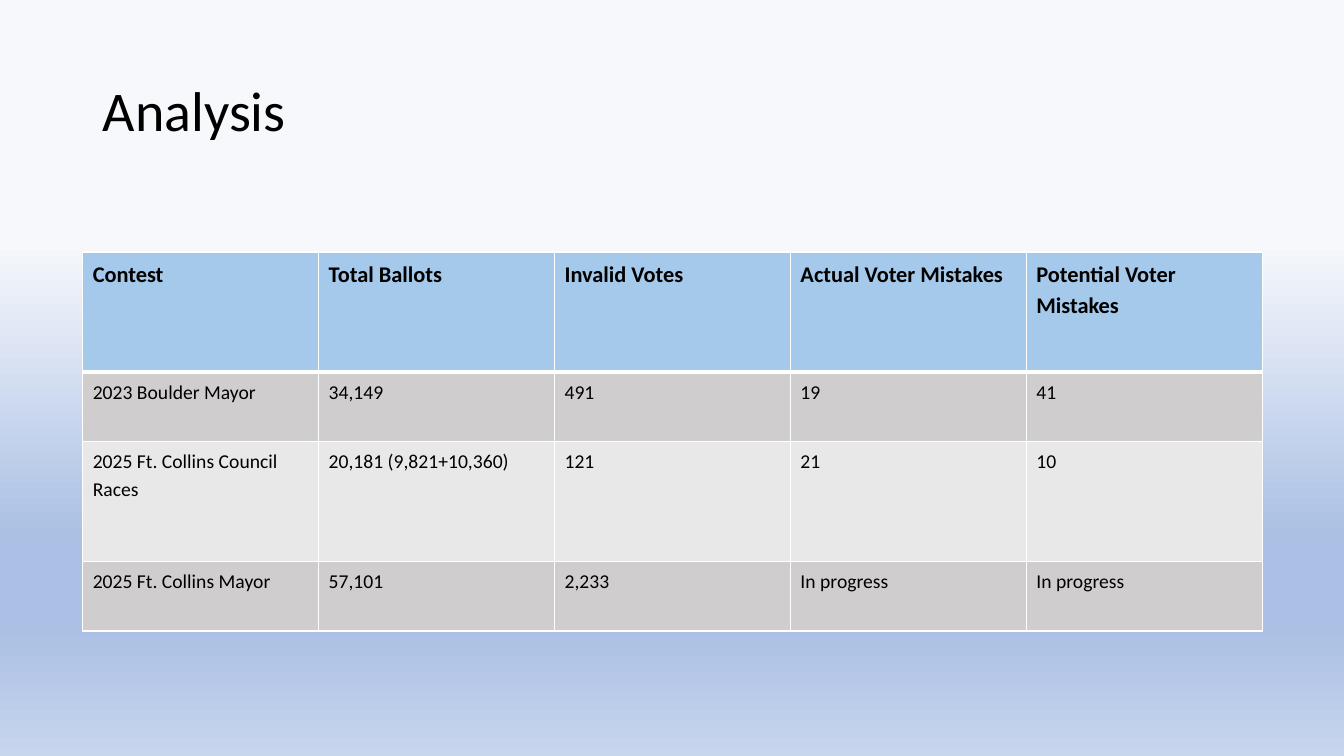
import pptx
import pptx.dml.color
import pptx.enum.text
import pptx.oxml
import pptx.oxml.ns
import pptx.util
from pptx.util import Inches

FONT = "Calibri"
BLACK, WHITE = "000000", "FFFFFF"
HEADER_BLUE, DARK_BAND, LIGHT_BAND = "A5C9EB", "D0CDCF", "E9E8E9"
BACKGROUND_STOPS = [(32, "F6F8FC"), (71, "ABC0E4"), (83, "ABC0E4"), (100, "C7D5ED")]
ROW_HEIGHTS = [1.19, 0.69, 1.19, 0.69]
CONTESTS = [
    ["Contest", "Total Ballots", "Invalid Votes", "Actual Voter Mistakes", "Potential Voter Mistakes"],
    ["2023 Boulder Mayor", "34,149", "491", "19", "41"],
    ["2025 Ft. Collins Council Races", "20,181 (9,821+10,360)", "121", "21", "10"],
    ["2025 Ft. Collins Mayor", "57,101", "2,233", "In progress", "In progress"],
]


def rgb(hex_colour):
    return pptx.dml.color.RGBColor.from_string(hex_colour)


def drawing_xml(xml):
    namespace = pptx.oxml.ns.nsdecls("a")
    return pptx.oxml.parse_xml(xml.replace(">", f" {namespace}>", 1))


def format_paragraph(paragraph, size, bold, line_spacing):
    paragraph.font.name = FONT
    paragraph.font.size = pptx.util.Pt(size)
    paragraph.font.bold = bold
    paragraph.font.color.rgb = rgb(BLACK)
    paragraph.line_spacing = line_spacing


def add_background(slide):
    fill = slide.background.fill
    fill.gradient()
    fill.gradient_angle = 270
    stops = next(slide.element.iter(pptx.oxml.ns.qn("a:gsLst")))
    for default_stop in list(stops):
        stops.remove(default_stop)
    for percent, colour in BACKGROUND_STOPS:
        stops.append(drawing_xml(
            f'<a:gs pos="{percent * 1000}"><a:srgbClr val="{colour}"/></a:gs>'))


def add_title(slide, left, top, width, height):
    title = slide.shapes.title
    title.left, title.top = Inches(left), Inches(top)
    title.width, title.height = Inches(width), Inches(height)
    frame = title.text_frame
    frame.text = "Analysis"
    frame.word_wrap = True
    frame.auto_size = pptx.enum.text.MSO_AUTO_SIZE.NONE
    frame.vertical_anchor = pptx.enum.text.MSO_ANCHOR.MIDDLE
    heading = frame.paragraphs[0]
    heading.alignment = pptx.enum.text.PP_ALIGN.LEFT
    format_paragraph(heading, 40, False, 0.9)


def set_borders(cell, top, bottom):
    properties = cell._tc.get_or_add_tcPr()
    widths = {"L": 1, "R": 1, "T": top, "B": bottom}
    for position, (side, width) in enumerate(widths.items()):
        properties.insert(position, drawing_xml(
            f'<a:ln{side} w="{pptx.util.Pt(width)}"><a:solidFill>'
            f'<a:srgbClr val="{WHITE}"/></a:solidFill></a:ln{side}>'))


def add_contest_table(slide, left, top, width):
    column_count = len(CONTESTS[0])
    table = slide.shapes.add_table(
        len(CONTESTS), column_count, Inches(left), Inches(top),
        Inches(width), Inches(sum(ROW_HEIGHTS))).table
    for column in table.columns:
        column.width = Inches(width / column_count)
    for row_index, (values, height) in enumerate(zip(CONTESTS, ROW_HEIGHTS)):
        table.rows[row_index].height = Inches(height)
        is_header = row_index == 0
        band = HEADER_BLUE if is_header else (LIGHT_BAND, DARK_BAND)[row_index % 2]
        for column_index, value in enumerate(values):
            cell = table.cell(row_index, column_index)
            cell.text = value
            cell.fill.solid()
            cell.fill.fore_color.rgb = rgb(band)
            set_borders(cell, 3 if row_index == 1 else 1, 3 if is_header else 1)
            entry = cell.text_frame.paragraphs[0]
            format_paragraph(entry, 16 if is_header else 14, is_header, 1.15)
            entry.space_after = pptx.util.Pt(8)


def main():
    presentation = pptx.Presentation()
    presentation.slide_width = Inches(13.33)
    presentation.slide_height = Inches(7.5)
    slide = presentation.slides.add_slide(presentation.slide_layouts[5])
    add_background(slide)
    add_title(slide, 0.92, 0.4, 11.5, 1.45)
    add_contest_table(slide, 0.82, 2.5, 11.7)
    presentation.save("out.pptx")


if __name__ == "__main__":
    main()
